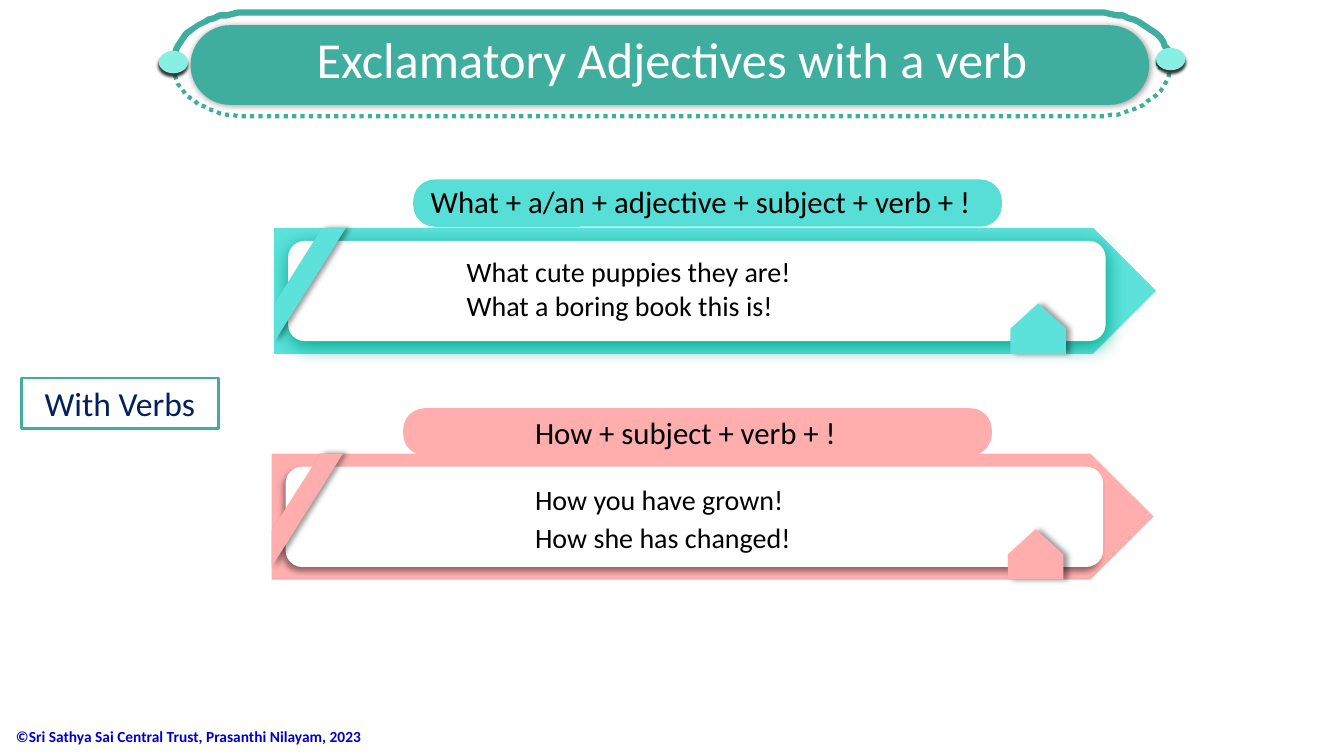
"""Build the slide on exclamatory adjectives with a verb."""
import math

from lxml import etree
from pptx import Presentation
from pptx.dml.color import RGBColor
from pptx.enum import dml, shapes, text
from pptx.oxml import ns
from pptx.util import Pt

TEAL = "3FAE9E"


def dress(shape, fill, line=None, width=0, shadow=None):
    """Set fill, outline and shadow (colour, opacity, blur, distance, angle)."""
    shape.shadow.inherit = False
    shape.fill.solid()
    shape.fill.fore_color.rgb = RGBColor.from_string(fill)
    if line:
        shape.line.color.rgb = RGBColor.from_string(line)
        shape.line.width = Pt(width)
    else:
        shape.line.fill.background()
    if shadow:
        colour, opacity, blur, distance, angle = shadow
        effects = shape._element.spPr.find(ns.qn("a:effectLst"))
        outer = etree.SubElement(
            effects, ns.qn("a:outerShdw"), blurRad=str(Pt(blur)), dist=str(Pt(distance)),
            dir=str(angle * 60000), algn="ctr", rotWithShape="0")
        tint = etree.SubElement(outer, ns.qn("a:srgbClr"), val=colour)
        etree.SubElement(tint, ns.qn("a:alpha"), val=str(opacity * 1000))
    return shape


def write(box, words, size, colour="000000", align=text.PP_ALIGN.CENTER, spacing=1.0):
    """Put one paragraph per line of words into the box."""
    frame = box.text_frame
    frame.word_wrap = True
    frame.text = words
    for para in frame.paragraphs:
        para.alignment = align
        para.line_spacing = spacing
        para.font.name = "Calibri"
        para.font.size = Pt(size)
        para.font.color.rgb = RGBColor.from_string(colour)
    return frame


deck = Presentation()
deck.slide_width, deck.slide_height = Pt(960), Pt(540)
page = deck.slides.add_slide(deck.slide_layouts[6])
items = page.shapes
preset = shapes.MSO_SHAPE

credit = items.add_textbox(Pt(4.3), Pt(511.2), Pt(310), Pt(29.5))
frame = write(credit, "©Sri Sathya Sai Central Trust, Prasanthi Nilayam, 2023", 11,
              "0000CC", text.PP_ALIGN.LEFT)
frame.vertical_anchor = text.MSO_ANCHOR.MIDDLE
frame.paragraphs[0].font.bold = True

left, right, radius, depth = 123.8, 835.4, 51.1, 35.3
angles = [math.radians(step * 5) for step in range(19)]
for base, direction, width, dash in (
        (44.6, -1, 4.5, dml.MSO_LINE.SOLID),
        (47.5, 1, 3, dml.MSO_LINE.ROUND_DOT)):
    arc = [(radius * (1 - math.cos(a)), base + direction * depth * math.sin(a)) for a in angles]
    outline = [(left + x, y) for x, y in arc] + [(right - x, y) for x, y in reversed(arc)]
    builder = items.build_freeform(*outline[0], scale=Pt(1))
    builder.add_line_segments(outline[1:], close=True)
    half = dress(builder.convert_to_shape(), "FFFFFF", TEAL, width)
    half.line.dash_style = dash

for x, y, w, h, fill, shadow in (
        (128.2, 15.8, 697.7, 58.3, "FFFFFF", None),
        (136.1, 18, 684.7, 56.9, TEAL, ("000000", 40, 5, 0, 0))):
    pill = items.add_shape(preset.ROUNDED_RECTANGLE, Pt(x), Pt(y), Pt(w), Pt(h))
    pill.adjustments[0] = 0.5
    dress(pill, fill, shadow=shadow)

for x, y in ((113.4, 36.4), (825.8, 34.2)):
    knob = items.add_shape(preset.OVAL, Pt(x), Pt(y), Pt(20.9), Pt(16))
    dress(knob, "88F0E2", shadow=("000000", 80, 2, 2.2, 90))

title = items.add_textbox(Pt(192.2), Pt(16.6), Pt(576), Pt(94.3))
write(title, "Exclamatory Adjectives with a verb", 36, "FFFFFF")

topic = items.add_shape(preset.RECTANGLE, Pt(15.1), Pt(270), Pt(141.1), Pt(36))
dress(topic, "FFFFFF", TEAL, 2)
write(topic, "With Verbs", 24, "002060")

soft = ("000000", 40, 4, 3, 0)
banners = (
    {"at": (195.8, 162.7), "fill": "5CE2DB", "shadow": ("00A48A", 100, 14, 3, 90),
     "words": "What cute puppies they are!\nWhat a boring book this is!",
     "words_at": (326.2, 178.6, 308.9, 55.4), "spacing": 1.0,
     "label_at": (295.2, 128.2), "label_fill": "57DED6",
     "rule": "What + a/an + adjective + subject + verb + !",
     "rule_at": (290.2, 126.7, 420.5, 33.8)},
    {"at": (194, 324), "fill": "FFADAD", "shadow": ("000000", 40, 4, 3, 135),
     "words": "How you have grown!\nHow she has changed!",
     "words_at": (375.1, 337.7, 206.6, 61.2), "spacing": 1.14,
     "label_at": (288, 291.6), "label_fill": "FFADAD",
     "rule": "How + subject + verb + !",
     "rule_at": (365.8, 292.3, 247.7, 33.8)},
)
for banner in banners:
    x, y = banner["at"]
    fill = banner["fill"]
    arrow = items.add_shape(preset.PENTAGON, Pt(x), Pt(y), Pt(630), Pt(90))
    dress(arrow, fill)
    panel = items.add_shape(preset.ROUNDED_RECTANGLE, Pt(x + 10), Pt(y + 9.4), Pt(584), Pt(71.6))
    dress(panel, "FFFFFF", shadow=banner["shadow"])

    builder = items.build_freeform(x + 34.6, y, scale=Pt(1))
    builder.add_line_segments([(x + 51.1, y), (x, y + 81), (x, y + 54.7)], close=True)
    dress(builder.convert_to_shape(), fill, shadow=soft)

    house = items.add_shape(preset.PENTAGON, Pt(x + 527.8), Pt(y + 52.2), Pt(36), Pt(39.6))
    house.rotation = 270
    dress(house, fill, shadow=soft)

    examples = items.add_textbox(*map(Pt, banner["words_at"]))
    write(examples, banner["words"], 20, align=text.PP_ALIGN.LEFT, spacing=banner["spacing"])

    label = items.add_shape(
        preset.ROUNDED_RECTANGLE, *map(Pt, banner["label_at"]), Pt(420.5), Pt(33.8))
    label.adjustments[0] = 0.455
    dress(label, banner["label_fill"])
    write(items.add_textbox(*map(Pt, banner["rule_at"])), banner["rule"], 22)

deck.save("out.pptx")
